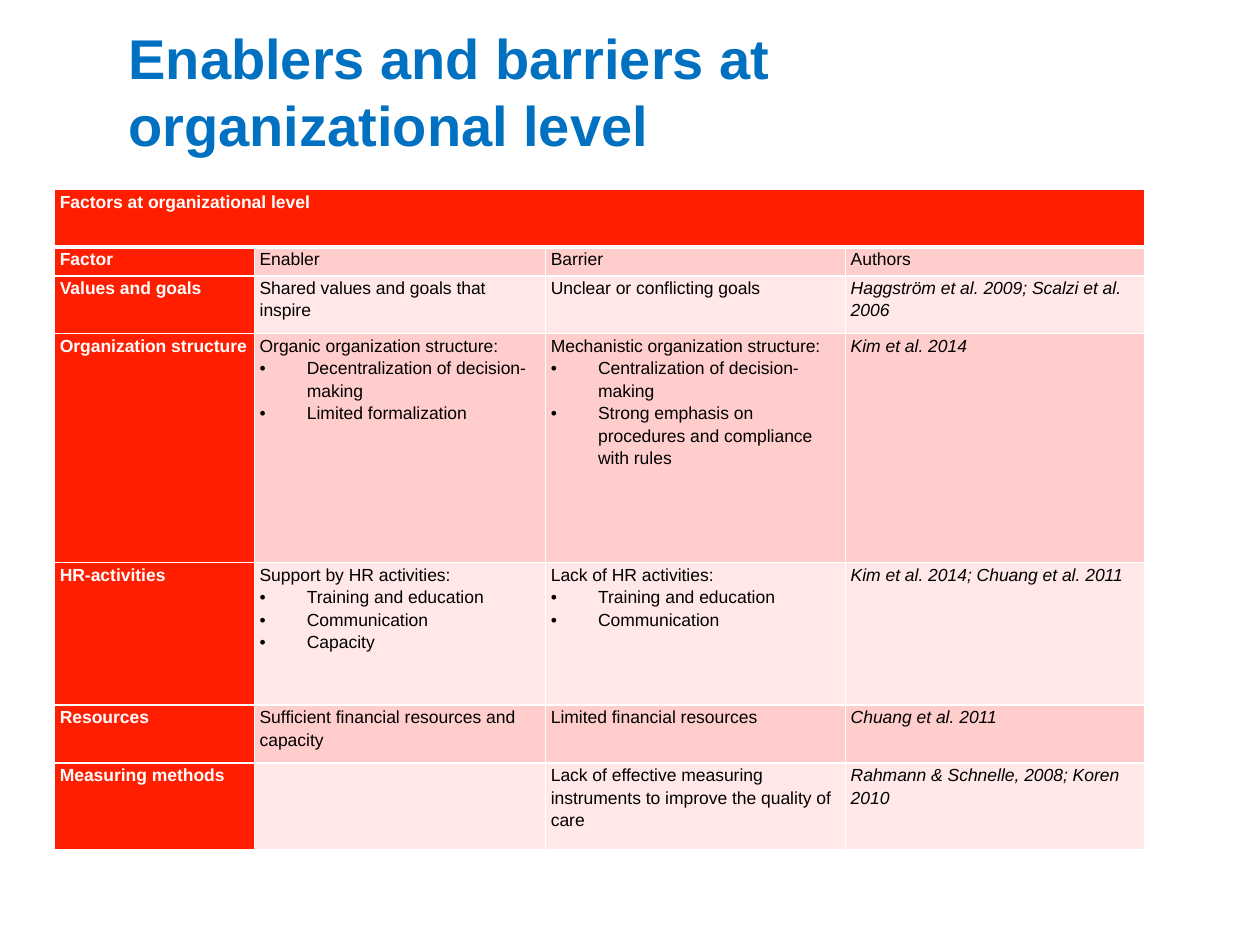
import pptx
import pptx.util
import pptx.dml.color
import pptx.enum.text
import pptx.oxml.ns
from lxml import etree

Pt = pptx.util.Pt

TITLE = "Enablers and barriers at organizational level"
HEADING = "Factors at organizational level"
ROWS = [
    ("Factor", ["Enabler"], ["Barrier"], "Authors"),
    ("Values and goals", ["Shared values and goals that inspire"],
     ["Unclear or conflicting goals"],
     "Haggström et al. 2009; Scalzi et al. 2006"),
    ("Organization structure",
     ["Organic organization structure:",
      "Decentralization of decision-making", "Limited formalization"],
     ["Mechanistic organization structure:",
      "Centralization of decision-making",
      "Strong emphasis on procedures and compliance with rules"],
     "Kim et al. 2014"),
    ("HR-activities",
     ["Support by HR activities:",
      "Training and education", "Communication", "Capacity"],
     ["Lack of HR activities:", "Training and education", "Communication"],
     "Kim et al. 2014; Chuang et al. 2011"),
    ("Resources", ["Sufficient financial resources and capacity"],
     ["Limited financial resources"], "Chuang et al. 2011"),
    ("Measuring methods", [],
     ["Lack of effective measuring instruments to improve the quality of care"],
     "Rahmann & Schnelle, 2008; Koren 2010"),
]
COL_WIDTHS = [114.2, 166.4, 171.4, 171.2]
ROW_HEIGHTS = [33, 16.4, 33, 131, 81.4, 33, 49.6]
COLORS = {"title": "0070C0", "red": "FF1E00", "dark_band": "FFCDCC",
          "light_band": "FFE8E7", "white": "FFFFFF", "black": "000000"}
FONT = "Arial"
INDENT = 27


def rgb(name):
    return pptx.dml.color.RGBColor.from_string(COLORS[name])


def add_run(p, text, size, color, bold=False, italic=False):
    r = p.add_run()
    r.text = text
    r.font.name = FONT
    r.font.size = Pt(size)
    r.font.bold = bold
    r.font.italic = italic
    r.font.color.rgb = rgb(color)


def add_bullet(p):
    pPr = p._p.get_or_add_pPr()
    pPr.set("marL", str(Pt(INDENT)))
    pPr.set("indent", str(-Pt(INDENT)))
    etree.SubElement(pPr, pptx.oxml.ns.qn("a:buFont")).set("typeface", FONT)
    etree.SubElement(pPr, pptx.oxml.ns.qn("a:buChar")).set("char", "•")


def set_borders(cell, widths):
    tcPr = cell._tc.get_or_add_tcPr()
    for i, (side, width) in enumerate(widths.items()):
        ln = etree.Element(pptx.oxml.ns.qn("a:" + side), w=str(Pt(width)))
        fill = etree.SubElement(ln, pptx.oxml.ns.qn("a:solidFill"))
        etree.SubElement(fill, pptx.oxml.ns.qn("a:srgbClr")).set("val", COLORS["white"])
        tcPr.insert(i, ln)


def fill_cell(cell, lines, fill, color, bold=False, italic=False):
    cell.margin_left = cell.margin_right = Pt(3)
    cell.margin_top = cell.margin_bottom = 0
    cell.fill.solid()
    cell.fill.fore_color.rgb = rgb(fill)
    tf = cell.text_frame
    for i, line in enumerate(lines):
        p = tf.add_paragraph() if i else tf.paragraphs[0]
        p.line_spacing = 1.15
        if i:
            add_bullet(p)
        add_run(p, line, 10, color, bold, italic)


prs = pptx.Presentation()
prs.slide_width, prs.slide_height = Pt(720), Pt(540)
s = prs.slides.add_slide(prs.slide_layouts[6])

tf = s.shapes.add_textbox(Pt(66.4), Pt(8.6), Pt(486), Pt(85)).text_frame
tf.word_wrap = True
tf.vertical_anchor = pptx.enum.text.MSO_ANCHOR.BOTTOM
add_run(tf.paragraphs[0], TITLE, 32, "title", bold=True)

table = s.shapes.add_table(len(ROW_HEIGHTS), len(COL_WIDTHS), Pt(31.2), Pt(108.2),
                           Pt(sum(COL_WIDTHS)), Pt(sum(ROW_HEIGHTS))).table
for col, width in zip(table.columns, COL_WIDTHS):
    col.width = Pt(width)
for row, height in zip(table.rows, ROW_HEIGHTS):
    row.height = Pt(height)

table.cell(0, 0).merge(table.cell(0, len(COL_WIDTHS) - 1))
fill_cell(table.cell(0, 0), [HEADING], "red", "white", bold=True)
for i, (factor, enabler, barrier, authors) in enumerate(ROWS, 1):
    band = "dark_band" if i % 2 else "light_band"
    fill_cell(table.cell(i, 0), [factor], "red", "white", bold=True)
    fill_cell(table.cell(i, 1), enabler, band, "black")
    fill_cell(table.cell(i, 2), barrier, band, "black")
    fill_cell(table.cell(i, 3), [authors], band, "black", italic=i > 1)

for i, row in enumerate(table.rows):
    for cell in row.cells:
        set_borders(cell, {"lnL": 1, "lnR": 1, "lnT": 3 if i == 1 else 1,
                           "lnB": 3 if i == 0 else 1})

prs.save("out.pptx")
